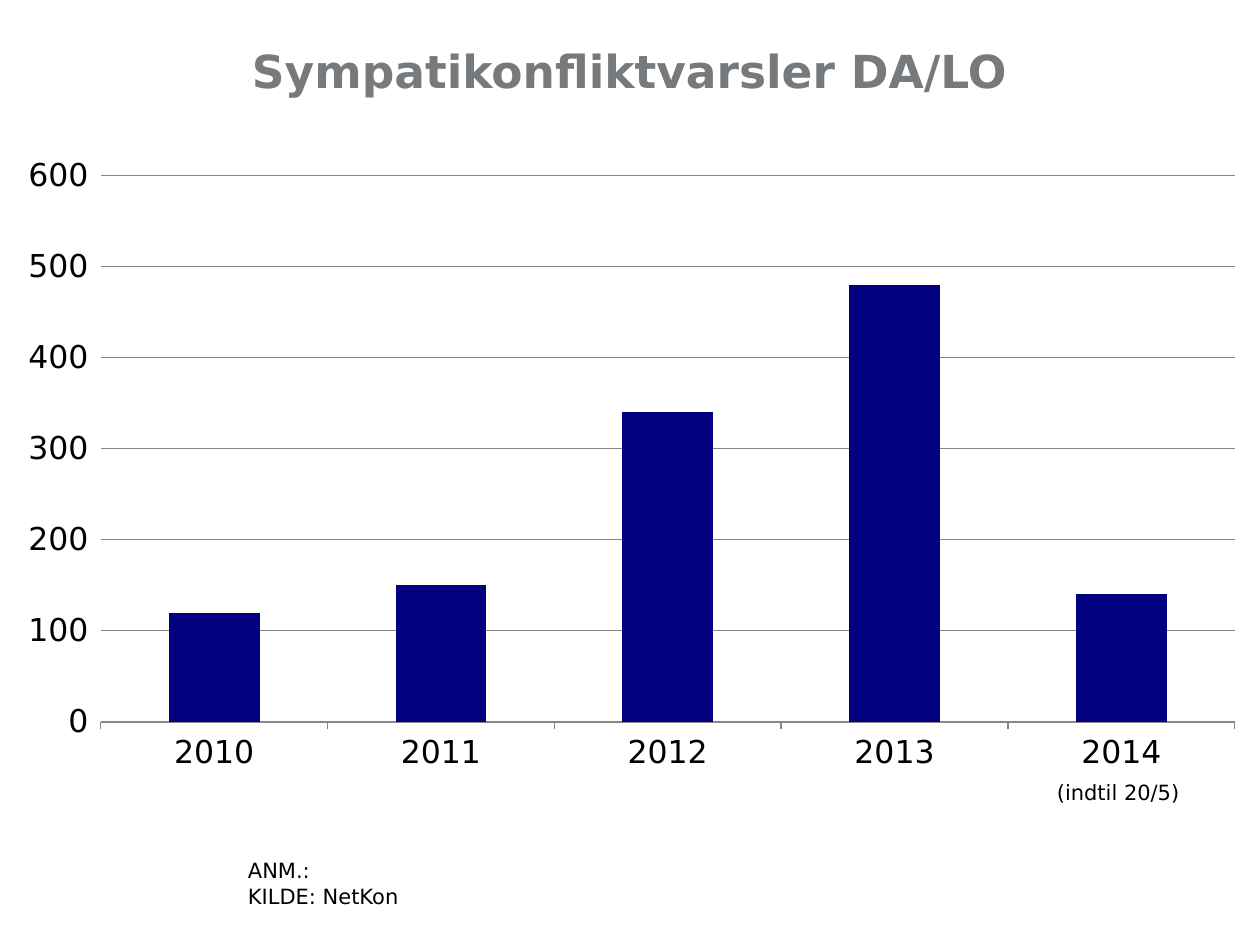
from dataclasses import dataclass

from lxml.etree import SubElement
from pptx import Presentation
from pptx.chart.data import CategoryChartData
from pptx.dml.color import RGBColor
from pptx.enum.chart import XL_CHART_TYPE as ChartType, XL_TICK_MARK as TickMark
from pptx.enum.text import MSO_ANCHOR as Anchor, PP_ALIGN as Align
from pptx.oxml.ns import qn
from pptx.util import Pt

FONT = "DejaVu Sans"
BLACK, GREY, LINE_GREY, NAVY = "000000", "777A7C", "878787", "000080"


@dataclass
class Area:
    left: float
    top: float
    width: float
    height: float

    def lengths(self) -> tuple:
        return Pt(self.left), Pt(self.top), Pt(self.width), Pt(self.height)


@dataclass
class Note:
    area: Area
    text: str


NOTES = [
    Note(Area(134.6, 486.7, 438.5, 36), "ANM.:\nKILDE: NetKon"),
    Note(Area(596.9, 442.1, 90.7, 21.6), "(indtil 20/5)"),
]
WARNINGS = {"2010": 120, "2011": 150, "2012": 340, "2013": 480, "2014": 140}
PLOT = {"x": 0.08, "y": 0.05, "w": 0.9, "h": 0.85}


def color(value: str) -> RGBColor:
    return RGBColor.from_string(value)


def style_font(font, size: float, value: str, bold: bool = False) -> None:
    font.name, font.size, font.bold = FONT, Pt(size), bold
    font.color.rgb = color(value)


def style_line(line) -> None:
    line.color.rgb = color(LINE_GREY)
    line.width = Pt(0.75)


def add_title(page, text: str, area: Area) -> None:
    title = page.shapes.title
    title.left, title.top, title.width, title.height = area.lengths()
    frame = title.text_frame
    frame.margin_left = frame.margin_right = 0
    frame.vertical_anchor = Anchor.MIDDLE
    frame.text = text
    para = frame.paragraphs[0]
    para.alignment = Align.CENTER
    style_font(para.runs[0].font, 26, GREY, bold=True)


def add_note(page, note: Note) -> None:
    frame = page.shapes.add_textbox(*note.area.lengths()).text_frame
    frame.word_wrap = True
    frame.text = note.text
    for para in frame.paragraphs:
        for span in para.runs:
            style_font(span.font, 12, BLACK)


def set_plot_layout(chart, fractions: dict) -> None:
    plot_area = chart.plots[0]._element.getparent()
    layout = plot_area.find(qn("c:layout"))
    if layout is None:
        layout = SubElement(plot_area, qn("c:layout"))
        plot_area.insert(0, layout)
    manual = SubElement(layout, qn("c:manualLayout"))
    SubElement(manual, qn("c:layoutTarget")).set("val", "inner")
    for side in "xy":
        SubElement(manual, qn(f"c:{side}Mode")).set("val", "edge")
    for side, fraction in fractions.items():
        SubElement(manual, qn(f"c:{side}")).set("val", str(fraction))


def add_column_chart(page, area: Area) -> None:
    data = CategoryChartData()
    data.categories = list(WARNINGS)
    data.add_series("Series 1", list(WARNINGS.values()))
    chart = page.shapes.add_chart(ChartType.COLUMN_CLUSTERED, *area.lengths(), data).chart
    chart.has_legend = chart.has_title = False
    style_font(chart.font, 18, BLACK)

    # Columns
    plot = chart.plots[0]
    plot.gap_width = 150
    plot.vary_by_categories = False
    fill = plot.series[0].format.fill
    fill.solid()
    fill.fore_color.rgb = color(NAVY)

    # Axes
    style_line(chart.category_axis.format.line)
    chart.category_axis.major_tick_mark = TickMark.OUTSIDE
    values = chart.value_axis
    values.minimum_scale, values.maximum_scale, values.major_unit = 0, 600, 100
    values.major_tick_mark = TickMark.OUTSIDE
    values.format.line.fill.background()
    values.has_major_gridlines = True
    style_line(values.major_gridlines.format.line)
    values.tick_labels.number_format = "#,##0"
    values.tick_labels.number_format_is_linked = False
    set_plot_layout(chart, PLOT)


def main() -> None:
    deck = Presentation()
    deck.slide_width, deck.slide_height = Pt(720), Pt(540)
    page = deck.slides.add_slide(deck.slide_layouts[5])
    add_title(page, "Sympatikonfliktvarsler DA/LO", Area(48.2, 15.1, 623.5, 49.7))
    add_column_chart(page, Area(0, 82.1, 720, 367.2))
    for note in NOTES:
        add_note(page, note)
    deck.save("out.pptx")


if __name__ == "__main__":
    main()
